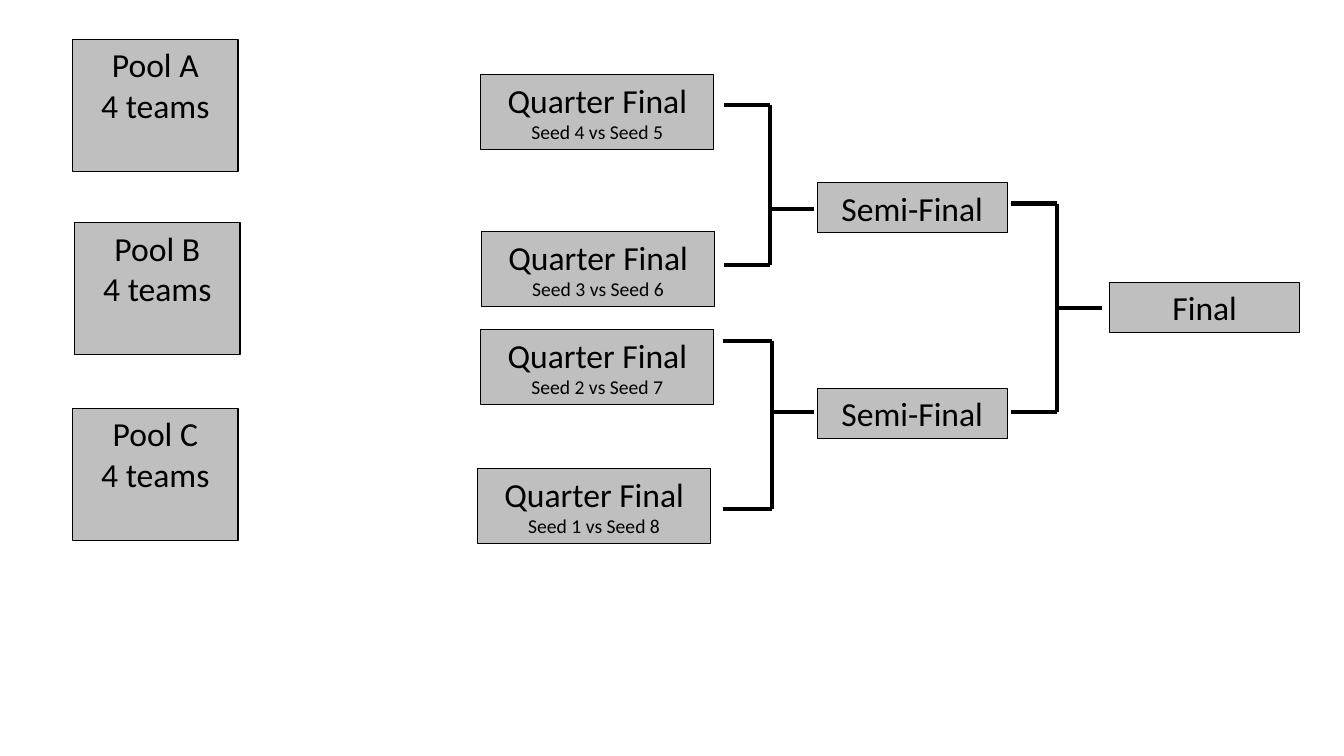
import pptx
import pptx.dml.color
import pptx.enum.shapes
import pptx.enum.text
import pptx.oxml.ns
import pptx.util
from dataclasses import dataclass
from lxml import etree

Cm = pptx.util.Cm
Pt = pptx.util.Pt
RGBColor = pptx.dml.color.RGBColor


@dataclass(frozen=True)
class Theme:
    ink: RGBColor = RGBColor(0x00, 0x00, 0x00)
    panel: RGBColor = RGBColor(0xBF, 0xBF, 0xBF)
    font: str = "Calibri"
    title: Pt = Pt(24)
    detail: Pt = Pt(14)
    border: Pt = Pt(0.75)
    bracket: Pt = Pt(3)


THEME = Theme()
POOL_SIZE = (4.17, 3.33)
QUARTER_SIZE = (5.87, 1.88)
ROUND_SIZE = (4.78, 1.27)

POOLS = [("Pool A", 1.83, 0.99), ("Pool B", 1.88, 5.61), ("Pool C", 1.83, 10.29)]
QUARTERS = [
    ("Seed 4 vs Seed 5", 12.12, 1.88),
    ("Seed 3 vs Seed 6", 12.14, 5.84),
    ("Seed 2 vs Seed 7", 12.12, 8.31),
    ("Seed 1 vs Seed 8", 12.04, 11.81),
]
LATE_ROUNDS = [
    ("Semi-Final", 20.6, 4.6),
    ("Semi-Final", 20.6, 9.78),
    ("Final", 27.97, 7.11),
]
# left, spine, right, top, middle, bottom
BRACKETS = [
    (18.24, 19.41, 20.52, 2.64, 5.26, 6.68),
    (18.21, 19.46, 20.52, 8.59, 10.39, 12.83),
    (25.48, 26.64, 27.76, 5.13, 7.77, 10.39),
]


def apply_format(target, values):
    for name, value in values.items():
        setattr(target, name, value)


def add_box(page, left, top, size, lines):
    """Add a bordered panel; lines holds (text, type size) pairs."""
    box = page.shapes.add_shape(
        pptx.enum.shapes.MSO_SHAPE.RECTANGLE,
        Cm(left), Cm(top), *(Cm(length) for length in size))
    box.shadow.inherit = False
    box.fill.solid()
    box.fill.fore_color.rgb = THEME.panel
    box.line.color.rgb = THEME.ink
    box.line.width = THEME.border
    frame = box.text_frame
    apply_format(frame, {
        "word_wrap": True,
        "vertical_anchor": pptx.enum.text.MSO_ANCHOR.TOP,
    })
    for index, (text, type_size) in enumerate(lines):
        para = frame.add_paragraph() if index else frame.paragraphs[0]
        para.alignment = pptx.enum.text.PP_ALIGN.CENTER
        span = para.add_run()
        span.text = text
        apply_format(span.font, {"name": THEME.font, "size": type_size})
        span.font.color.rgb = THEME.ink


def add_line(page, start, end):
    line = page.shapes.add_connector(
        pptx.enum.shapes.MSO_CONNECTOR.STRAIGHT,
        *(Cm(length) for length in start + end))
    line.line.color.rgb = THEME.ink
    line.line.width = THEME.bracket
    etree.SubElement(line._element.spPr, pptx.oxml.ns.qn("a:effectLst"))


def add_bracket(page, left, spine, right, top, middle, bottom):
    """Join two matches to the match that their winners play."""
    add_line(page, (left, top), (spine, top))
    add_line(page, (spine, top), (spine, bottom))
    add_line(page, (left, bottom), (spine, bottom))
    add_line(page, (spine, middle), (right, middle))


def main():
    deck = pptx.Presentation()
    apply_format(deck, {"slide_width": Cm(33.87), "slide_height": Cm(19.05)})
    page = deck.slides.add_slide(deck.slide_layouts[6])
    for name, left, top in POOLS:
        add_box(page, left, top, POOL_SIZE,
                [(name, THEME.title), ("4 teams", THEME.title)])
    for seeds, left, top in QUARTERS:
        add_box(page, left, top, QUARTER_SIZE,
                [("Quarter Final", THEME.title), (seeds, THEME.detail)])
    for name, left, top in LATE_ROUNDS:
        add_box(page, left, top, ROUND_SIZE, [(name, THEME.title)])
    for bracket in BRACKETS:
        add_bracket(page, *bracket)
    deck.save("out.pptx")


if __name__ == "__main__":
    main()
